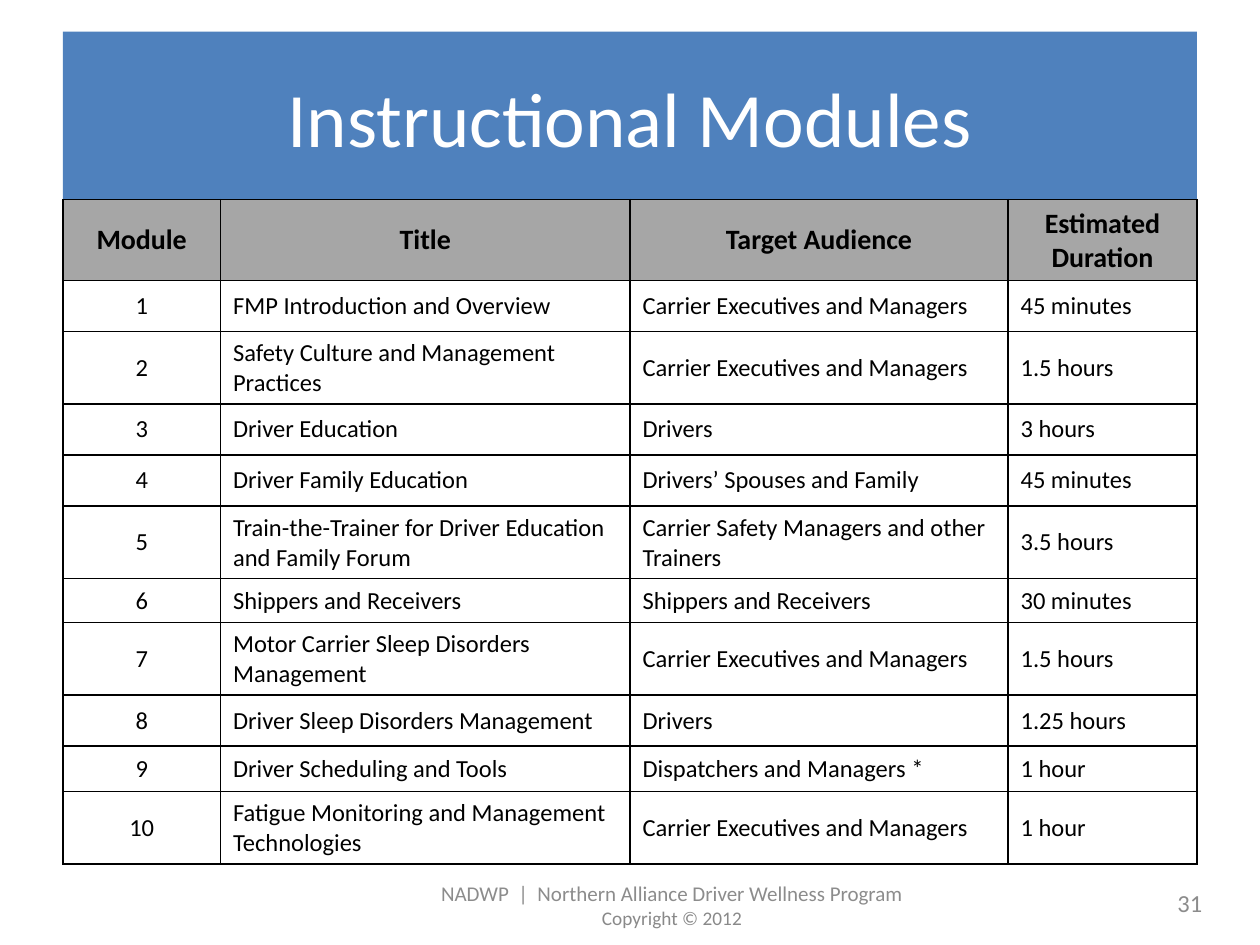
from dataclasses import dataclass

import pptx
import pptx.dml.color
import pptx.enum.shapes
import pptx.enum.text
import pptx.util
from lxml import etree
from pptx.oxml.ns import qn

Pt = pptx.util.Pt
RGBColor = pptx.dml.color.RGBColor
ALIGN = pptx.enum.text.PP_ALIGN
MIDDLE = pptx.enum.text.MSO_ANCHOR.MIDDLE

BLUE = RGBColor(0x4F, 0x81, 0xBD)
HEADER_GREY = RGBColor(0xA6, 0xA6, 0xA6)
FOOTER_GREY = RGBColor(0x8C, 0x8C, 0x8C)
COPYRIGHT_GREY = RGBColor(0x89, 0x89, 0x89)
WHITE = RGBColor(0xFF, 0xFF, 0xFF)
BLACK = RGBColor(0, 0, 0)

LEFT, WIDTH = 36, 648
TABLE_TOP = 114
COLUMN_WIDTHS = (90, 234, 216, 108)
ROW_HEIGHT = 29.2
CELL_INSET = 3.9


@dataclass
class Line:
    text: str
    size: float
    color: RGBColor
    align: ALIGN = ALIGN.CENTER
    bold: bool = False


@dataclass
class Label:
    left: float
    top: float
    width: float
    height: float
    lines: list[Line]
    inset: float = 3.6


@dataclass
class Module:
    title: str
    audience: str
    duration: str
    height: float = ROW_HEIGHT


LABELS = [
    Label(526.3, 501.5, 167.8, 28.8, [Line("31", 14, FOOTER_GREY, ALIGN.RIGHT)]),
    Label(216, 503.5, 336, 27.4, [
        Line("NADWP  |  Northern Alliance Driver Wellness Program", 12, FOOTER_GREY),
        Line("Copyright © 2012", 11, COPYRIGHT_GREY),
    ], inset=0),
    Label(LEFT, 21.6, WIDTH, 90, [Line("Instructional Modules", 44, WHITE)]),
]

HEADERS = ("Module", "Title", "Target Audience", "Estimated Duration")
EXECUTIVES = "Carrier Executives and Managers"
MODULES = [
    Module("FMP Introduction and Overview", EXECUTIVES, "45 minutes"),
    Module("Safety Culture and Management Practices", EXECUTIVES, "1.5 hours"),
    Module("Driver Education", "Drivers", "3 hours"),
    Module("Driver Family Education", "Drivers’ Spouses and Family", "45 minutes"),
    Module("Train-the-Trainer for Driver Education and Family Forum",
           "Carrier Safety Managers and other Trainers", "3.5 hours"),
    Module("Shippers and Receivers", "Shippers and Receivers", "30 minutes", 25.2),
    Module("Motor Carrier Sleep Disorders Management", EXECUTIVES, "1.5 hours"),
    Module("Driver Sleep Disorders Management", "Drivers", "1.25 hours"),
    Module("Driver Scheduling and Tools", "Dispatchers and Managers *", "1 hour", 26),
    Module("Fatigue Monitoring and Management Technologies", EXECUTIVES, "1 hour"),
]


def write_lines(tf, lines: list[Line]) -> None:
    for i, line in enumerate(lines):
        p = tf.add_paragraph() if i else tf.paragraphs[0]
        p.alignment = line.align
        r = p.add_run()
        r.text = line.text
        r.font.color.rgb = line.color
        font_format = {"name": "Calibri", "size": Pt(line.size), "bold": line.bold}
        for name, value in font_format.items():
            setattr(r.font, name, value)


def add_label(s, label: Label) -> None:
    sp = s.shapes.add_textbox(Pt(label.left), Pt(label.top), Pt(label.width), Pt(label.height))
    tf = sp.text_frame
    frame_format = {"word_wrap": True, "vertical_anchor": MIDDLE,
                    "margin_top": Pt(label.inset), "margin_bottom": Pt(label.inset)}
    for name, value in frame_format.items():
        setattr(tf, name, value)
    write_lines(tf, label.lines)


def add_borders(cell) -> None:
    tc_pr = cell._tc.get_or_add_tcPr()
    for i, side in enumerate(("lnL", "lnR", "lnT", "lnB")):
        ln = etree.Element(qn(f"a:{side}"), w=str(Pt(1)))
        fill = etree.SubElement(ln, qn("a:solidFill"))
        etree.SubElement(fill, qn("a:srgbClr"), val=str(BLACK))
        tc_pr.insert(i, ln)  # borders come before the fill


def fill_cell(cell, line: Line, fill: RGBColor | None = None) -> None:
    cell_format = {"vertical_anchor": MIDDLE,
                   "margin_top": Pt(CELL_INSET), "margin_bottom": Pt(CELL_INSET)}
    for name, value in cell_format.items():
        setattr(cell, name, value)
    if fill is None:
        cell.fill.background()
    else:
        cell.fill.solid()
        cell.fill.fore_color.rgb = fill
    write_lines(cell.text_frame, [line])
    add_borders(cell)


def add_module_table(s) -> None:
    heights = [ROW_HEIGHT] + [m.height for m in MODULES]
    frame = s.shapes.add_table(len(heights), len(HEADERS), Pt(LEFT), Pt(TABLE_TOP),
                               Pt(WIDTH), Pt(sum(heights)))
    table = frame.table
    for column, width in zip(table.columns, COLUMN_WIDTHS):
        column.width = Pt(width)
    for row, height in zip(table.rows, heights):
        row.height = Pt(height)
    for col, text in enumerate(HEADERS):
        fill_cell(table.cell(0, col), Line(text, 16, BLACK, bold=True), HEADER_GREY)
    for number, m in enumerate(MODULES, 1):
        for col, text in enumerate((str(number), m.title, m.audience, m.duration)):
            align = ALIGN.LEFT if col else ALIGN.CENTER
            fill_cell(table.cell(number, col), Line(text, 14, BLACK, align))


def main() -> None:
    prs = pptx.Presentation()
    prs.slide_width, prs.slide_height = Pt(720), Pt(540)
    s = prs.slides.add_slide(prs.slide_layouts[6])

    # Title band
    sp = s.shapes.add_shape(pptx.enum.shapes.MSO_SHAPE.RECTANGLE,
                            Pt(LEFT), Pt(18), Pt(WIDTH), Pt(96))
    sp.shadow.inherit = False
    sp.fill.solid()
    sp.fill.fore_color.rgb = BLUE
    sp.line.fill.background()

    # Page number, footer and title
    for label in LABELS:
        add_label(s, label)

    # Modules
    add_module_table(s)
    prs.save("out.pptx")


if __name__ == "__main__":
    main()
